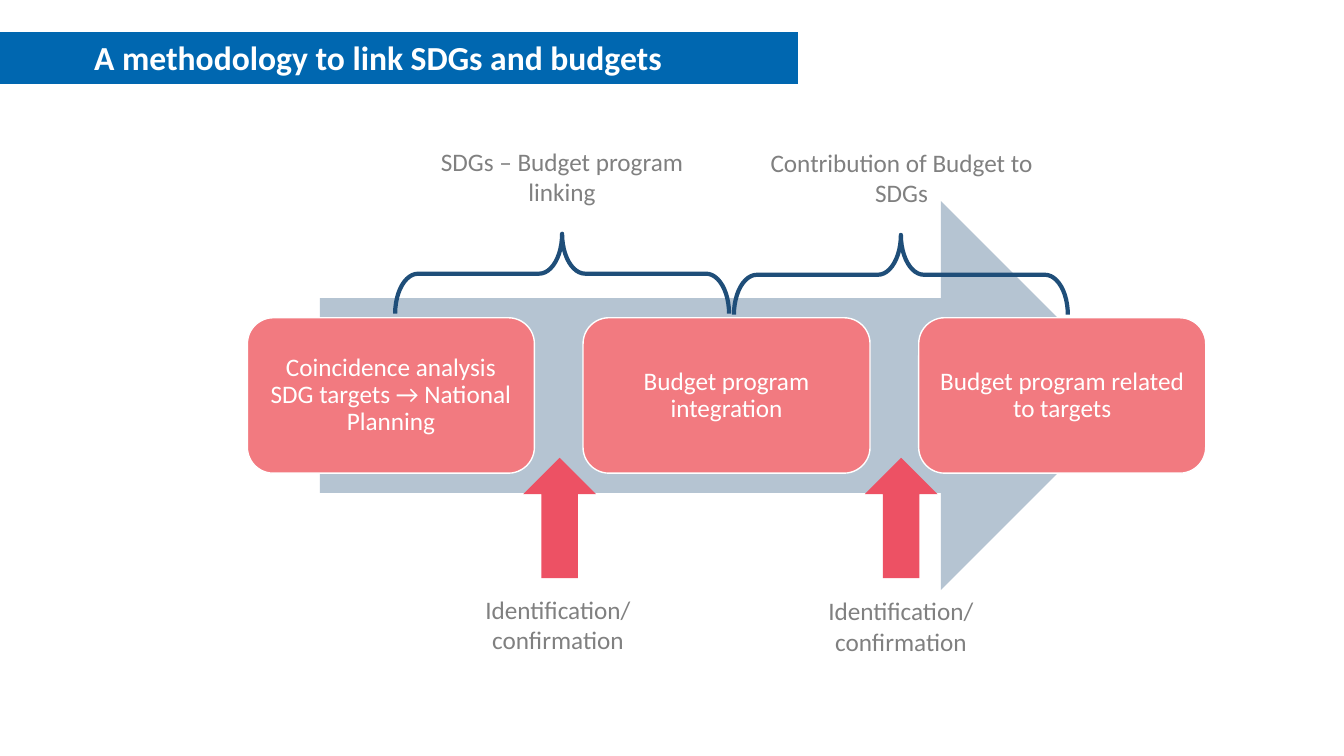
from lxml.etree import SubElement
from pptx import Presentation
from pptx.dml.color import RGBColor
from pptx.enum.shapes import MSO_SHAPE
from pptx.enum.text import MSO_ANCHOR, PP_ALIGN
from pptx.oxml.ns import qn
from pptx.util import Pt

WHITE = RGBColor(0xFF, 0xFF, 0xFF)
BLUE = RGBColor(0x00, 0x67, 0xB0)
NAVY = RGBColor(0x1F, 0x4E, 0x79)
CORAL = RGBColor(0xF2, 0x7A, 0x80)
RED = RGBColor(0xED, 0x51, 0x64)
GREY = RGBColor(0x80, 0x80, 0x80)


class Deck:
    """Holds the text style and the current slide."""
    font = "Calibri"
    size = 18

    def __init__(self, prs):
        self.s = prs.slides.add_slide(prs.slide_layouts[6])

    def shape(self, kind, x, y, w, h, fill=None, line=None, width=1):
        sp = self.s.shapes.add_shape(kind, Pt(x), Pt(y), Pt(w), Pt(h))
        sp.shadow.inherit = False
        if fill is None:
            sp.fill.background()
        else:
            sp.fill.solid()
            sp.fill.fore_color.rgb = fill
        if line is None:
            sp.line.fill.background()
        else:
            sp.line.color.rgb = line
            sp.line.width = Pt(width)
        return sp

    def put_lines(self, tf, lines, color, align=PP_ALIGN.CENTER, size=None,
                  bold=False, spacing=None):
        tf.word_wrap = True
        for i, line in enumerate(lines):
            p = tf.add_paragraph() if i else tf.paragraphs[0]
            p.alignment = align
            if spacing:
                p.line_spacing = spacing
            r = p.add_run()
            r.text = line
            r.font.name = self.font
            r.font.size = Pt(size or self.size)
            r.font.bold = bold
            r.font.color.rgb = color

    def text(self, x, y, w, h, lines, color=GREY, **style):
        sp = self.s.shapes.add_textbox(Pt(x), Pt(y), Pt(w), Pt(h))
        self.put_lines(sp.text_frame, lines, color, **style)

    def band(self, x, y, w, h, alpha):
        sp = self.shape(MSO_SHAPE.RIGHT_ARROW, x, y, w, h, NAVY)
        color = sp.element.spPr.find(qn("a:solidFill"))[0]
        SubElement(color, qn("a:alpha")).set("val", str(alpha * 1000))

    def card(self, x, y, w, h, label):
        sp = self.shape(MSO_SHAPE.ROUNDED_RECTANGLE, x, y, w, h, CORAL, WHITE)
        tf = sp.text_frame
        tf.margin_left = tf.margin_right = Pt(5.4)
        tf.margin_top = tf.margin_bottom = Pt(5.4)
        tf.vertical_anchor = MSO_ANCHOR.MIDDLE
        self.put_lines(tf, [label], WHITE, spacing=0.9)

    def brace(self, x, y, w, h):
        # A left brace turned upright: its own box is h wide and w tall
        sp = self.shape(MSO_SHAPE.LEFT_BRACE, x + (w - h) / 2, y + (h - w) / 2,
                        h, w, line=NAVY, width=3)
        sp.rotation = 90
        sp.adjustments[0] = 0.288


def main():
    prs = Presentation()
    prs.slide_width, prs.slide_height = Pt(960), Pt(540)
    d = Deck(prs)

    # Title bar
    d.shape(MSO_SHAPE.RECTANGLE, 0, 23, 570, 37, BLUE)
    d.text(0, 23, 480, 36, ["A methodology to link SDGs and budgets"], WHITE,
           align=PP_ALIGN.RIGHT, size=24, bold=True)

    # Process band with its three steps
    d.band(228.5, 143.5, 582.5, 278, 33)
    steps = ["Coincidence analysis SDG targets → National Planning",
             "Budget program integration",
             "Budget program related to targets"]
    for i, step in enumerate(steps):
        d.card(176.75 + 239.75 * i, 227, 205, 111, step)

    # Checks between the steps
    for arrow_x, label_x, label_y in ((373.75, 324, 421), (617.75, 569, 422)):
        d.shape(MSO_SHAPE.UP_ARROW, arrow_x, 327, 52, 86, RED)
        d.text(label_x, label_y, 149, 51, ["Identification/", "confirmation"])

    # Braces and the phases they span
    phases = [(307.5, 188, ["SDGs – Budget program", "linking"]),
              (523.5, 241, ["Contribution of Budget to SDGs"])]
    for i, (label_x, label_w, lines) in enumerate(phases):
        d.brace(282.25 + 242 * i, 167 + 0.75 * i, 238.5, 57)
        d.text(label_x, 100.75 + 0.75 * i, label_w, 51, lines)

    prs.save("out.pptx")


if __name__ == "__main__":
    main()
